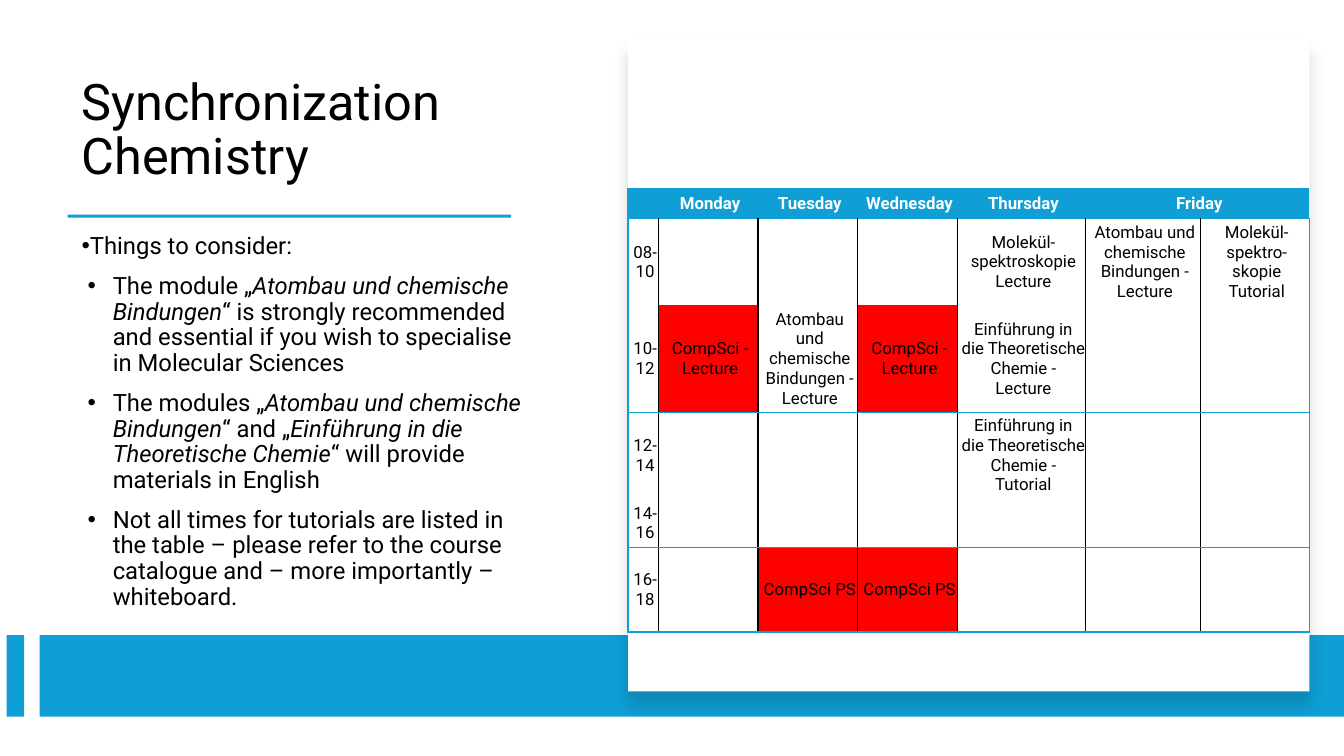
from lxml import etree
from pptx import Presentation
from pptx.dml.color import RGBColor
from pptx.enum.shapes import MSO_SHAPE
from pptx.enum.text import MSO_ANCHOR, PP_ALIGN
from pptx.oxml.ns import qn
from pptx.util import Inches, Pt

RECT = MSO_SHAPE.RECTANGLE
MIDDLE, BOTTOM = MSO_ANCHOR.MIDDLE, MSO_ANCHOR.BOTTOM
CENTER = PP_ALIGN.CENTER
INK = {"blue": "0F9ED5", "red": "FF0000", "white": "FFFFFF", "black": "000000"}
PLAIN = "{2D5ABB26-0587-4C30-8999-92F81FD0307C}"

POINTS = [
    [("Things to consider:", False)],
    [("The module „", False), ("Atombau und chemische Bindungen", True),
     ("“ is strongly recommended and essential if you wish to specialise in Molecular Sciences", False)],
    [("The modules „", False), ("Atombau und chemische Bindungen", True), ("“ and „", False),
     ("Einführung in die Theoretische Chemie", True), ("“ will provide materials in English", False)],
    [("Not all times for tutorials are listed in the table – please refer to the course "
      "catalogue and – more importantly – whiteboard.", False)],
]
BOND = "Atombau und chemische Bindungen - Lecture"
INTRO = "Einführung in die Theoretische Chemie - "
WEEK = [
    ["", "Monday", "Tuesday", "Wednesday", "Thursday", "Friday", ""],
    ["08-10", "", "", "", "Molekül-spektroskopie Lecture", BOND, "Molekül-spektro-skopie Tutorial"],
    ["10-12", "CompSci - Lecture", BOND, "CompSci - Lecture", INTRO + "Lecture", "", ""],
    ["12-14", "", "", "", INTRO + "Tutorial", "", ""],
    ["14-16", "", "", "", "", "", ""],
    ["16-18", "", "CompSci PS", "CompSci PS", "", "", ""],
]
COLS = [2.25, 7.42, 7.42, 7.42, 9.53, 8.55, 8.1]
ROWS = [4, 11.2, 11.2, 8.8, 6.4, 11.2]


class Deck:
    """Draws on one slide, measured on a grid of 100 columns by 100 rows."""

    def __init__(self):
        self.show = Presentation()
        self.show.slide_width, self.show.slide_height = Inches(13.33), Inches(7.5)
        self.slide = self.show.slides.add_slide(self.show.slide_layouts[6])
        self.font = "Roboto"

    def col(self, count):
        return round(self.show.slide_width * count / 100)

    def row(self, count):
        return round(self.show.slide_height * count / 100)

    def place(self, x, y, w, h):
        return self.col(x), self.row(y), self.col(w), self.row(h)

    def run(self, para, text, size, color="black", bold=False, slant=False):
        run = para.add_run()
        run.text = text
        font = run.font
        font.name, font.size, font.bold, font.italic = self.font, Pt(size), bold, slant
        font.color.rgb = RGBColor.from_string(INK[color])

    def bar(self, spot, color):
        bar = self.slide.shapes.add_shape(RECT, *self.place(*spot))
        bar.fill.solid()
        bar.fill.fore_color.rgb = RGBColor.from_string(INK[color])
        bar.line.fill.background()
        bar.shadow.inherit = False
        return bar

    def panel(self, spot):
        panel = self.bar(spot, "white")
        glow = panel._element.spPr.find(qn("a:effectLst"))
        cast = etree.SubElement(glow, qn("a:outerShdw"), blurRad=str(Pt(11)), dist=str(Pt(10)),
                                dir="5400000", algn="t", rotWithShape="0")
        tint = etree.SubElement(cast, qn("a:srgbClr"), val=INK["black"])
        etree.SubElement(tint, qn("a:alpha"), val="15000")

    def box(self, spot, anchor):
        frame = self.slide.shapes.add_textbox(*self.place(*spot)).text_frame
        frame.word_wrap = True
        frame.vertical_anchor = anchor
        return frame

    def title(self, spot, text):
        para = self.box(spot, BOTTOM).paragraphs[0]
        para.line_spacing = 0.9
        self.run(para, text, 36)

    def list(self, spot, points):
        frame = self.box(spot, MIDDLE)
        frame.margin_bottom = Inches(0.31)
        for n, parts in enumerate(points):
            para = frame.add_paragraph() if n else frame.paragraphs[0]
            props = para._p.get_or_add_pPr()
            props.set("marL", str(Inches(0.31 if n else 0)))
            props.set("indent", str(Inches(-0.25)))
            etree.SubElement(props, qn("a:buFont"), typeface="Arial")
            etree.SubElement(props, qn("a:buChar"), char="•")
            para.line_spacing = 0.9
            if n:
                para.space_before = Pt(10)
            for text, slant in parts:
                self.run(para, text, 17, slant=slant)

    def edge(self, cell, sides):
        props = cell._tc.get_or_add_tcPr()
        for n, side in enumerate("LRTB"):
            line = etree.Element(qn("a:ln" + side), w=str(Pt(1)))
            if side in sides:
                fill = etree.SubElement(line, qn("a:solidFill"))
                etree.SubElement(fill, qn("a:srgbClr"), val=INK[sides[side]])
            else:
                etree.SubElement(line, qn("a:noFill"))
            props.insert(n, line)

    def cell(self, cell, text, fill, color, bold):
        cell.margin_left, cell.margin_right = Inches(0.04), 0
        cell.margin_top = cell.margin_bottom = Inches(0.03)
        cell.vertical_anchor = MIDDLE
        if fill:
            cell.fill.solid()
            cell.fill.fore_color.rgb = RGBColor.from_string(INK[fill])
        else:
            cell.fill.background()
        para = cell.text_frame.paragraphs[0]
        para.alignment = CENTER
        if text:
            self.run(para, text, 12, color, bold)
        else:
            para._p.get_or_add_endParaRPr().set("sz", "1200")

    def table(self, x, y, cols, rows, data):
        spot = self.place(x, y, sum(cols), sum(rows))
        grid = self.slide.shapes.add_table(len(rows), len(cols), *spot).table
        grid._tbl.tblPr.find(qn("a:tableStyleId")).text = PLAIN
        grid.horz_banding = False
        for col, width in zip(grid.columns, cols):
            col.width = self.col(width)
        for row, height in zip(grid.rows, rows):
            row.height = self.row(height)
        last = len(cols) - 1
        for r, line in enumerate(data):
            for c, text in enumerate(line):
                head = r == 0
                fill = "blue" if head else "red" if text.startswith("CompSci") else None
                cell = grid.cell(r, c)
                self.cell(cell, text, fill, "white" if head else "black", head)
                sides = {} if head else {"L": "black", "R": "black"}
                if c == 0:
                    sides["L"] = "blue"
                if c == last:
                    sides["R"] = "blue"
                if head or r % 2:
                    sides["T"] = "blue"
                if r % 2:
                    sides["B"] = "blue"
                self.edge(cell, sides)
        grid.cell(0, last - 1).merge(grid.cell(0, last))


def main():
    deck = Deck()
    deck.title((5.33, 7.73, 35.1, 17.47), "Synchronization Chemistry")
    deck.bar((5.03, 28.4, 33, 0.4), "blue")
    deck.list((5.33, 32, 35.1, 51.2), POINTS)
    deck.bar((0.5, 84, 1.3, 10.8), "blue")
    deck.bar((2.96, 84, 97.04, 10.8), "blue")
    deck.panel((46.73, 5.2, 50.7, 86.27))
    deck.table(46.73, 24.93, COLS, ROWS, WEEK)
    deck.show.save("out.pptx")


if __name__ == "__main__":
    main()
